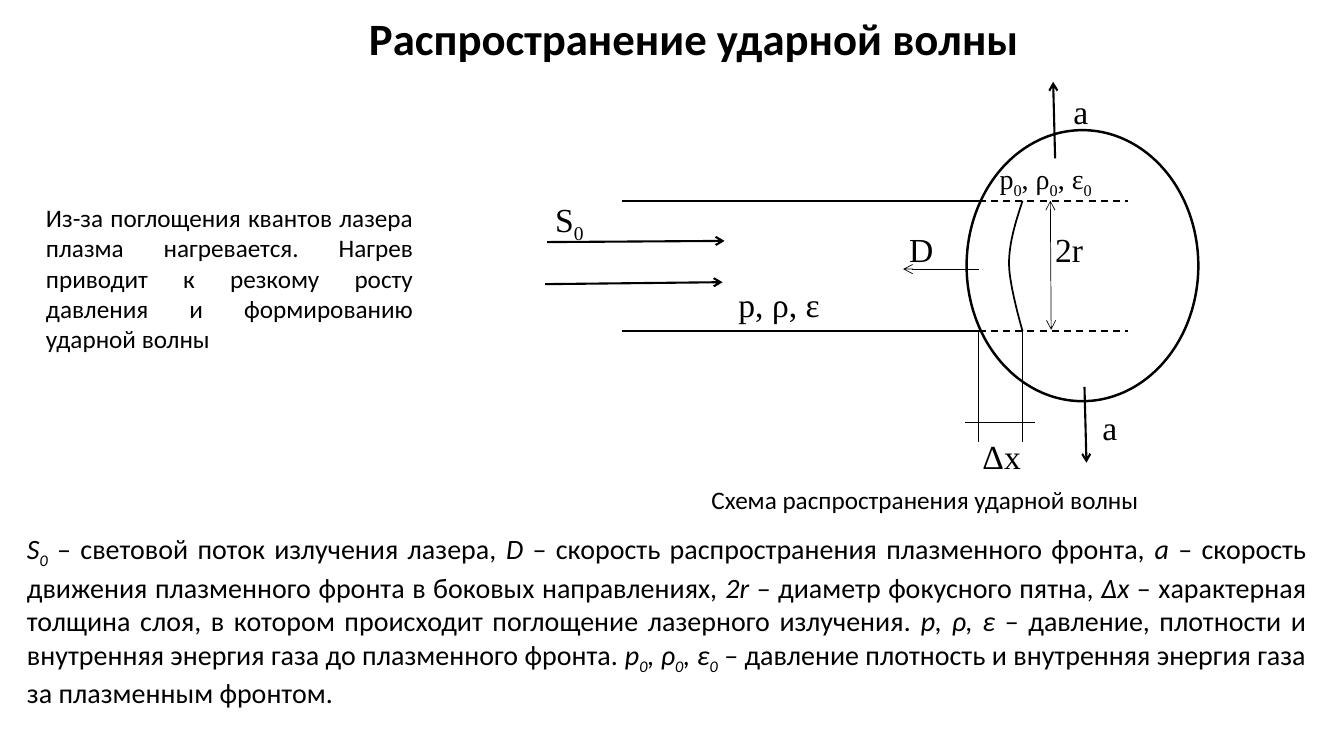
from lxml.etree import SubElement
from pptx import Presentation
from pptx.dml.color import RGBColor
from pptx.enum.dml import MSO_LINE
from pptx.enum.shapes import MSO_CONNECTOR, MSO_SHAPE
from pptx.enum.text import MSO_ANCHOR, PP_ALIGN
from pptx.oxml.ns import qn
from pptx.util import Cm, Pt

INK = "000000"
SANS, SERIF = "Calibri", "Times New Roman"

# In texts, * switches italics on and off, _ lowers the next character.
TITLE = "Распространение ударной волны"
CAUSE = ("Из-за поглощения квантов лазера плазма нагревается. Нагрев приводит "
         "к резкому росту давления и формированию ударной волны")
CAPTION = "Схема распространения ударной волны"
LEGEND = ("*S_0* – световой поток излучения лазера, *D* – скорость распространения "
          "плазменного фронта, *a* – скорость движения плазменного фронта в боковых "
          "направлениях, *2r *– диаметр фокусного пятна, *Δx* – характерная толщина "
          "слоя, в котором происходит поглощение лазерного излучения*. p, ρ, ε *– "
          "давление, плотности и внутренняя энергия газа до плазменного фронта. "
          "*p_0, ρ_0, ε_0 *– давление плотность и внутренняя энергия газа за "
          "плазменным фронтом.")

# Label, box in cm, size in points
LABELS = [
    ("a", (27.53, 10.13, 2.11, 1.27), 24),
    ("a", (26.8, 2.16, 1.75, 1.27), 24),
    ("2r", (26.34, 5.64, 2.11, 1.8), 24),
    ("Δx", (24.51, 10.85, 2.03, 1.8), 24),
    ("S_0", (13.74, 4.88, 2.84, 1.8), 24),
    ("D", (22.66, 5.64, 2.11, 1.8), 24),
    ("p, ρ, ε", (18.36, 7.04, 4.39, 1.35), 24),
    ("p_0, ρ_0, ε_0", (24.94, 3.94, 4.39, 1.35), 20),
]

# Beam edges, plasma front and absorbing layer, in cm
TOP, BASE = 5.06, 8.34
START, FRONT, BACK, END = 15.67, 24.66, 25.77, 28.42
PLASMA = (24.36, 3.28, 5.84, 6.83)
BULGE = [
    ((BACK, TOP), (25.6, 5.59), (25.43, 6.1), (25.43, 6.65)),
    ((25.43, 6.65), (25.43, 7.19), (BACK, BASE), (BACK, BASE)),
]

# From, to, width in points, ends with arrowheads
ARROWS = [
    ((27.33, 9.75), (27.38, 11.66), 1.5, ["tail"]),
    ((26.59, 3.99), (26.54, 2.06), 1.5, ["tail"]),
    ((13.79, 6.1), (18.26, 6.07), 1.5, ["tail"]),
    ((13.74, 7.16), (18.21, 7.11), 1.5, ["tail"]),
    ((FRONT, 6.78), (22.76, 6.78), 0.5, ["tail"]),
    ((26.47, TOP), (26.49, 8.31), 0.5, ["head", "tail"]),
]

deck = Presentation()
deck.slide_width, deck.slide_height = Cm(33.87), Cm(19.05)
slide = deck.slides.add_slide(deck.slide_layouts[6])
shapes = slide.shapes


def tint(code):
    return RGBColor.from_string(code)


def pieces(text):
    """Yield (words, italic, lowered) for each run of the marked text."""
    for turn, part in enumerate(text.split("*")):
        first, *rest = part.split("_")
        yield first, turn % 2 == 1, False
        for tail in rest:
            yield tail[0], turn % 2 == 1, True
            yield tail[1:], turn % 2 == 1, False


def write(text, box, size=18, font=SANS, bold=False, align=PP_ALIGN.LEFT,
          anchor=MSO_ANCHOR.TOP, space=1.0):
    frame = shapes.add_textbox(*map(Cm, box)).text_frame
    frame.word_wrap, frame.vertical_anchor = True, anchor
    para = frame.paragraphs[0]
    para.alignment, para.line_spacing = align, space
    for words, slant, low in pieces(text):
        if not words:
            continue
        run = para.add_run()
        run.text = words
        face = run.font
        face.name, face.size = font, Pt(size)
        face.bold, face.italic = bold, slant
        face.color.rgb = tint(INK)
        if low:
            run._r.get_or_add_rPr().set("baseline", "-25000")


def stroke(item, width):
    item.line.color.rgb = tint(INK)
    item.line.width = Pt(width)


def draw(start, end, width, heads=(), dash=False):
    """Add a straight line, with arrowheads at the ends named in heads."""
    line = shapes.add_connector(MSO_CONNECTOR.STRAIGHT, *map(Cm, start + end))
    stroke(line, width)
    if dash:
        line.line.dash_style = MSO_LINE.DASH
    for name in heads:
        SubElement(line.line._get_or_add_ln(), qn(f"a:{name}End"), type="arrow")
    SubElement(line._element.spPr, qn("a:effectLst"))


def outline(item, width):
    """Leave a shape unfilled, with a plain edge."""
    item.shadow.inherit = False
    item.fill.background()
    stroke(item, width)


def bend(curve, steps=16):
    """Return points along a cubic curve, without its first one."""
    points = []
    for step in range(1, steps + 1):
        t = step / steps
        parts = ((1 - t) ** 3, 3 * t * (1 - t) ** 2, 3 * t * t * (1 - t), t ** 3)
        points.append(tuple(Cm(sum(w * p[axis] for w, p in zip(parts, curve)))
                            for axis in (0, 1)))
    return points


write(TITLE, (2.57, -0.28, 29.85, 2.62), size=32, bold=True,
      align=PP_ALIGN.CENTER, anchor=MSO_ANCHOR.MIDDLE, space=0.9)
write(LEGEND, (0.43, 13.28, 32.74, 5.31), size=20, align=PP_ALIGN.JUSTIFY)

for edge in (TOP, BASE):
    draw((START, edge), (FRONT, edge), 1.75)
    draw((FRONT, edge), (END, edge), 1.25, dash=True)
outline(shapes.add_shape(MSO_SHAPE.OVAL, *map(Cm, PLASMA)), 1.75)

path = shapes.build_freeform(Cm(BACK), Cm(TOP))
for curve in BULGE:
    path.add_line_segments(bend(curve), close=False)
outline(path.convert_to_shape(), 1.25)

for arrow in ARROWS:
    draw(*arrow)
for side in (FRONT, BACK):
    draw((side, BASE), (side, 11.13), 1)
draw((24.33, 10.64), (26.09, 10.64), 0.5)

for label, box, size in LABELS:
    write(label, box, size=size, font=SERIF)
write(CAUSE, (0.91, 4.98, 9.75, 4.11), align=PP_ALIGN.JUSTIFY)
write(CAPTION, (17.68, 12.07, 14.53, 1.04))

deck.save("out.pptx")
